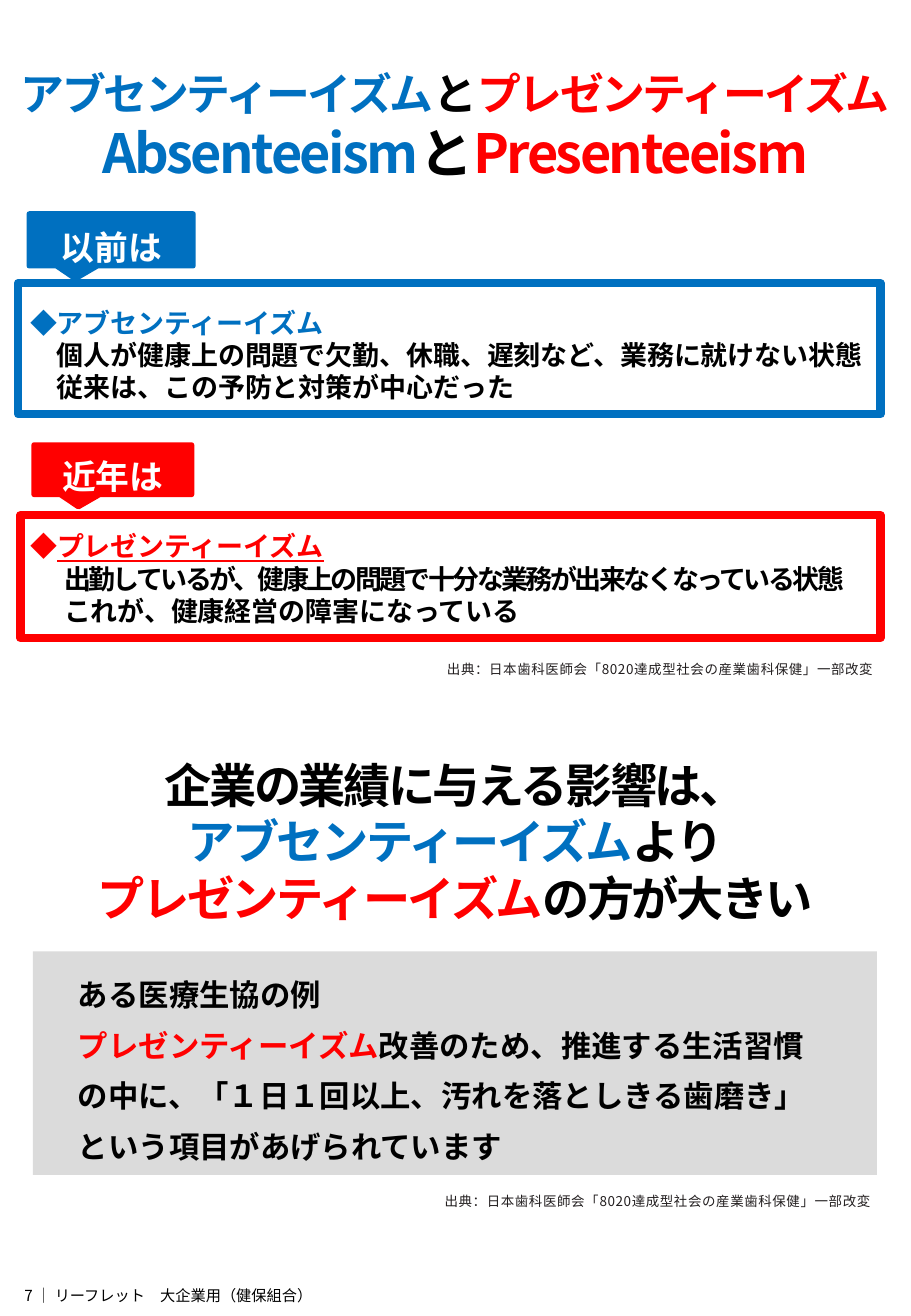
from lxml import etree
from pptx import Presentation
from pptx.dml.color import RGBColor
from pptx.enum.shapes import MSO_SHAPE as Shape
from pptx.enum.text import MSO_ANCHOR as Anchor, PP_ALIGN as Align
from pptx.oxml.ns import qn
from pptx.util import Cm, Pt

FONT = "Noto Sans CJK JP"
COLORS = {"blue": "0070C0", "red": "FF0000", "black": "000000",
          "white": "FFFFFF", "grey": "DBDBDB", "ink": "231F20"}
ABSENTEEISM = "アブセンティーイズム"
PRESENTEEISM = "プレゼンティーイズム"
SOURCE = "出典：日本歯科医師会「8020達成型社会の産業歯科保健」一部改変"


def rgb(color):
    return RGBColor.from_string(COLORS[color])


def add_run(paragraph, text, size, color, bold=True, spacing=0, underline=False, shadow=False):
    run = paragraph.add_run()
    run.text = text
    font = run.font
    font.name, font.size, font.bold = FONT, Pt(size), bold
    font.underline = underline
    font.color.rgb = rgb(color)
    props = run._r.get_or_add_rPr()
    if spacing:
        props.set("spc", str(round(spacing * 100)))
    if shadow:
        effects = etree.Element(qn("a:effectLst"))
        outer = etree.SubElement(effects, qn("a:outerShdw"), blurRad="38100",
                                 dist="38100", dir="2700000", algn="tl")
        shade = etree.SubElement(outer, qn("a:srgbClr"), val=COLORS["black"])
        etree.SubElement(shade, qn("a:alpha"), val="43000")
        props.find(qn("a:latin")).addprevious(effects)
    east_asian = etree.Element(qn("a:ea"), typeface=FONT)
    props.find(qn("a:latin")).addnext(east_asian)


def add_paragraph(frame, runs, align=Align.LEFT, indent=0, before=0, line=None):
    """Fill the first paragraph if it is still empty, else add one; runs are (text, style) pairs."""
    first = frame.paragraphs[0]
    paragraph = frame.add_paragraph() if first.runs else first
    paragraph.alignment = align
    paragraph.space_before = Pt(before)
    if line:
        paragraph.line_spacing = line
    if indent:
        paragraph._p.get_or_add_pPr().set("marL", str(Cm(indent)))
    for text, style in runs:
        if text == "\n":
            paragraph.add_line_break()
        else:
            add_run(paragraph, text, **style)


def set_frame(frame, insets, anchor=Anchor.TOP):
    frame.word_wrap = True
    frame.vertical_anchor = anchor
    (frame.margin_left, frame.margin_top,
     frame.margin_right, frame.margin_bottom) = map(Cm, insets)
    return frame


def add_text(slide, box, insets=(0.25, 0.13, 0.25, 0.13)):
    return set_frame(slide.shapes.add_textbox(*map(Cm, box)).text_frame, insets)


def add_block(slide, kind, box, fill=None, line=None, weight=0):
    block = slide.shapes.add_shape(kind, *map(Cm, box))
    block.shadow.inherit = False
    if fill:
        block.fill.solid()
        block.fill.fore_color.rgb = rgb(fill)
    else:
        block.fill.background()
    if line:
        block.line.color.rgb = rgb(line)
        block.line.width = Pt(weight)
    else:
        block.line.fill.background()
    return block


def add_era(slide, label, color, callout_box, text_box, frame_box, heading, details, indent):
    """A callout label above a framed definition."""
    callout = add_block(slide, Shape.RECTANGULAR_CALLOUT, callout_box, color, color, 3)
    callout.adjustments[0], callout.adjustments[1] = -0.218, 0.747
    label_frame = set_frame(callout.text_frame, (0.25, 0.41, 0.25, 0.13), Anchor.MIDDLE)
    add_paragraph(label_frame, [(label, dict(size=20, color="white"))], Align.CENTER)

    definition = add_text(slide, text_box)
    add_paragraph(definition, heading)
    for text, spacing in details:
        style = dict(size=16, color="black", spacing=spacing)
        add_paragraph(definition, [(text, style)], indent=indent)
    add_block(slide, Shape.RECTANGLE, frame_box, line=color, weight=5)


def add_source(slide, left, top):
    frame = add_text(slide, (left, top, 13.51, 0.41), (0, 0.08, 0, 0))
    style = dict(size=8, color="ink", bold=False, spacing=0.3)
    add_paragraph(frame, [(SOURCE, style)], Align.RIGHT, indent=0.05, before=2)


def add_title(slide):
    title = add_text(slide, (0, 1.27, 19.05, 2.74))
    small, large = dict(size=26, spacing=-1.5), dict(size=32, spacing=-1.5)
    add_paragraph(title, [
        (ABSENTEEISM, dict(small, color="blue")),
        ("と", dict(small, color="black")),
        (PRESENTEEISM, dict(small, color="red")),
        ("\n", None),
        ("Absenteeism", dict(large, color="blue")),
        ("と", dict(large, color="black")),
        ("Presenteeism", dict(large, color="red")),
    ], Align.CENTER)


def add_message(slide):
    message = add_text(slide, (0, 15.67, 19.05, 5.38))
    for line in ([("企業の業績に与える影響は、", "black")],
                 [(ABSENTEEISM, "blue"), ("より", "black")],
                 [(PRESENTEEISM, "red"), ("の方が大きい", "black")]):
        runs = [(text, dict(size=28, color=color, spacing=-1.5)) for text, color in line]
        add_paragraph(message, runs, Align.CENTER)


def add_example(slide):
    panel = add_block(slide, Shape.RECTANGLE, (0.69, 19.89, 17.65, 4.67), "grey")
    frame = set_frame(panel.text_frame, (0.3, 0.61, 0.13, 0.08))
    for line in ([("ある医療生協の例", "black")],
                 [(PRESENTEEISM, "red"), ("改善のため、推進する生活習慣", "black")],
                 [("の中に、「１日１回以上、汚れを落としきる歯磨き」", "black")],
                 [("という項目があげられています", "black")]):
        runs = [(text, dict(size=18, color=color, shadow=True)) for text, color in line]
        add_paragraph(frame, runs, indent=0.64, before=10.5, line=0.9)


def main():
    deck = Presentation()
    deck.slide_width, deck.slide_height = Cm(19.05), Cm(27.51)
    slide = deck.slides.add_slide(deck.slide_layouts[6])

    add_title(slide)
    blue, red = dict(size=16, color="blue"), dict(size=16, color="red")
    add_era(slide, "以前は", "blue", (0.61, 4.47, 3.43, 1.09),
            (0.38, 6.27, 18.03, 2.31), (0.38, 5.92, 18.03, 2.74),
            [("◆" + ABSENTEEISM, blue)],
            [("個人が健康上の問題で欠勤、休職、遅刻など、業務に就けない状態", 0),
             ("従来は、この予防と対策が中心だった", 0)], 0.56)
    add_era(slide, "近年は", "red", (0.71, 9.3, 3.3, 1.04),
            (0.38, 10.95, 18.03, 2.39), (0.43, 10.77, 17.98, 2.57),
            [("◆", red), (PRESENTEEISM, dict(red, underline=True))],
            [("出勤しているが、健康上の問題で十分な業務が出来なくなっている状態", -1.5),
             ("これが、健康経営の障害になっている", 0)], 0.71)
    add_message(slide)
    add_example(slide)
    add_source(slide, 4.75, 13.74)
    add_source(slide, 4.7, 24.87)

    footer = add_text(slide, (0.51, 26.9, 12.01, 0.5), (0, 0, 0, 0))
    add_paragraph(footer, [("7 │ リーフレット　大企業用（健保組合）",
                            dict(size=9, color="black", bold=False))])
    deck.save("out.pptx")


if __name__ == "__main__":
    main()
